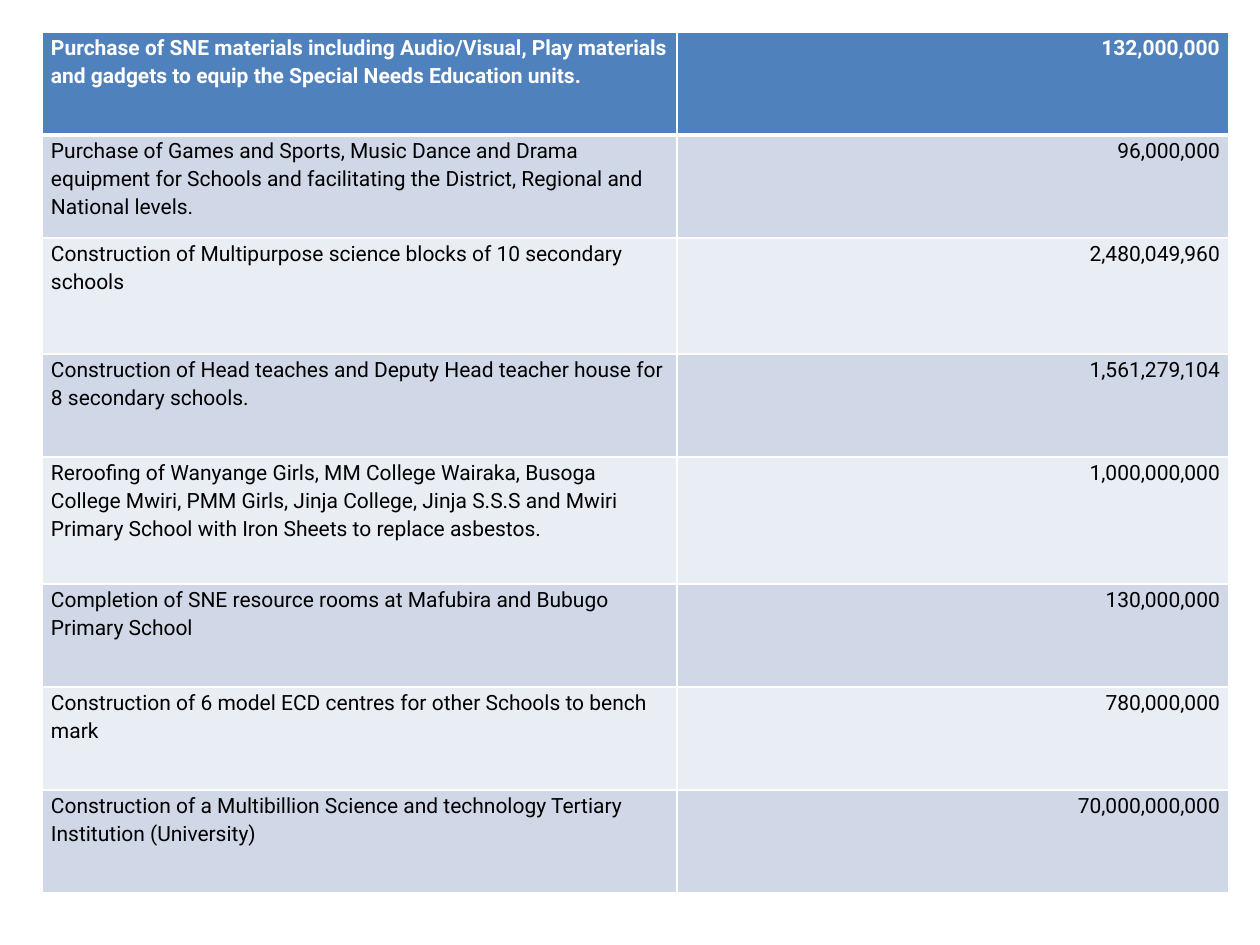
import pptx
import pptx.dml.color
import pptx.enum.text
import pptx.oxml
import pptx.oxml.ns
import pptx.util

SCALE = 914400 / 126  # EMU per px
LEFT, TOP = 42, 32
COLUMN_WIDTHS = [635, 552]
ALIGNMENTS = [pptx.enum.text.PP_ALIGN.LEFT, pptx.enum.text.PP_ALIGN.RIGHT]
HEADER_FILL, BAND_FILLS = "4F81BD", ["E9EDF4", "D0D8E8"]
WHITE, BLACK = "FFFFFF", "000000"
THIN, THICK = 1, 3

# Activity, amount, row height
budget = [
    ("Purchase of SNE materials including Audio/Visual, Play materials and gadgets "
     "to equip the Special Needs Education units.", "132,000,000", 103),
    ("Purchase of Games and Sports, Music Dance and Drama equipment for Schools and "
     "facilitating the District, Regional and National levels.", "96,000,000", 103),
    ("Construction of Multipurpose science blocks of 10 secondary schools",
     "2,480,049,960", 116),
    ("Construction of Head teaches and Deputy Head teacher house for 8 secondary schools.",
     "1,561,279,104", 103),
    ("Reroofing of Wanyange Girls, MM College Wairaka, Busoga College Mwiri, PMM Girls, "
     "Jinja College, Jinja S.S.S and Mwiri Primary School with Iron Sheets to replace asbestos.",
     "1,000,000,000", 127),
    ("Completion of SNE resource rooms at Mafubira and Bubugo Primary School",
     "130,000,000", 103),
    ("Construction of 6 model ECD centres for other Schools to bench mark",
     "780,000,000", 103),
    ("Construction of a Multibillion Science and technology Tertiary Institution (University)",
     "70,000,000,000", 103),
]


def px(length):
    return pptx.util.Emu(round(length * SCALE))


def color(value):
    return pptx.dml.color.RGBColor.from_string(value)


deck = pptx.Presentation()
deck.slide_width, deck.slide_height = px(1260), px(945)
page = deck.slides.add_slide(deck.slide_layouts[6])

heights = [height for _, _, height in budget]
table = page.shapes.add_table(
    len(budget), len(COLUMN_WIDTHS),
    px(LEFT), px(TOP), px(sum(COLUMN_WIDTHS)), px(sum(heights)),
).table
for column, width in zip(table.columns, COLUMN_WIDTHS):
    column.width = px(width)

cell_format = {
    "margin_left": px(9), "margin_right": px(9), "margin_top": 0, "margin_bottom": 0,
    "vertical_anchor": pptx.enum.text.MSO_ANCHOR.TOP,
}
for row, (activity, amount, height) in enumerate(budget):
    table.rows[row].height = px(height)
    is_header = row == 0
    borders = {
        "lnL": THIN, "lnR": THIN,
        "lnT": THICK if row == 1 else THIN,
        "lnB": THICK if is_header else THIN,
    }
    font_format = {"name": "Roboto", "size": pptx.util.Pt(12), "bold": is_header}
    for column, text in enumerate((activity, amount)):
        cell = table.cell(row, column)
        for name, value in cell_format.items():
            setattr(cell, name, value)

        properties = cell._tc.get_or_add_tcPr()
        for side, weight in borders.items():
            properties.append(pptx.oxml.parse_xml(
                f'<a:{side} {pptx.oxml.ns.nsdecls("a")} w="{pptx.util.Pt(weight)}">'
                f'<a:solidFill><a:srgbClr val="{WHITE}"/></a:solidFill></a:{side}>'
            ))
        cell.fill.solid()
        cell.fill.fore_color.rgb = color(HEADER_FILL if is_header else BAND_FILLS[row % 2])

        para = cell.text_frame.paragraphs[0]
        para.alignment = ALIGNMENTS[column]
        para.line_spacing = 1.15
        span = para.add_run()
        span.text = text
        for name, value in font_format.items():
            setattr(span.font, name, value)
        span.font.color.rgb = color(WHITE if is_header else BLACK)

deck.save("out.pptx")
